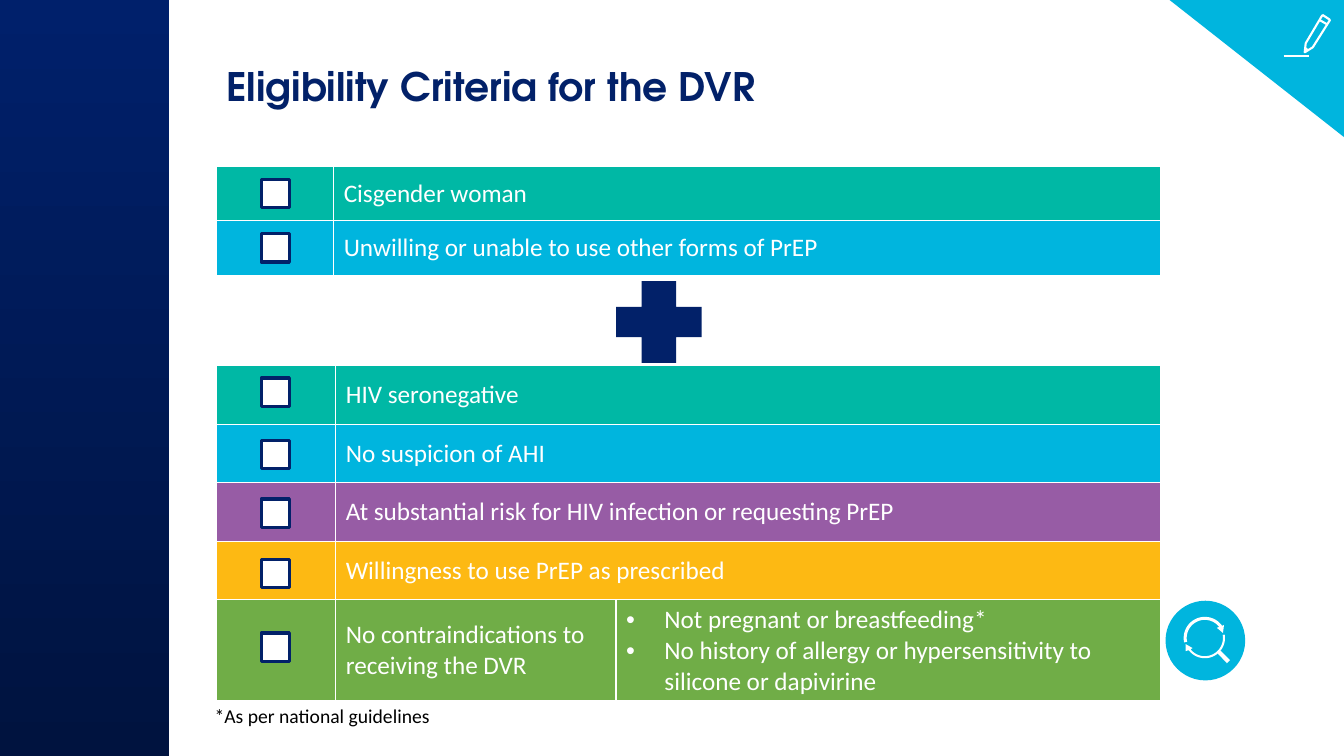
import math

from pptx import Presentation
from pptx import util as u
from pptx.dml.color import RGBColor
from pptx.enum import shapes, text
from pptx.oxml import parse_xml
from pptx.oxml.ns import nsdecls

NAVY = RGBColor(0x02, 0x21, 0x69)
NIGHT = RGBColor(0x00, 0x13, 0x3F)
ROYAL = RGBColor(0x00, 0x20, 0x6B)
TEAL = RGBColor(0x00, 0xB8, 0xA5)
CYAN = RGBColor(0x00, 0xB5, 0xDE)
PURPLE = RGBColor(0x97, 0x5C, 0xA5)
AMBER = RGBColor(0xFD, 0xB9, 0x13)
GREEN = RGBColor(0x70, 0xAD, 0x47)
WHITE = RGBColor(0xFF, 0xFF, 0xFF)
BLACK = RGBColor(0x00, 0x00, 0x00)

RECTANGLE = shapes.MSO_SHAPE.RECTANGLE
BULLET_INDENT = 0.38


class SlideBuilder:
    heading_font = "TeX Gyre Adventor"
    body_font = "Calibri"

    def __init__(self, slide):
        self.slide = slide

    def style(self, para, size, color, font=None, bold=False):
        for span in para.runs:
            span.font.name = font or self.body_font
            span.font.size = u.Pt(size)
            span.font.color.rgb = color
            span.font.bold = bold

    def paint(self, shape, fill=None, line=None, width=1):
        shape.shadow.inherit = False
        if fill is None:
            shape.fill.background()
        else:
            shape.fill.solid()
            shape.fill.fore_color.rgb = fill
        if line is None:
            shape.line.fill.background()
        else:
            shape.line.color.rgb = line
            shape.line.width = u.Pt(width)

    def shape(self, kind, at, fill, line=None, width=1):
        shape = self.slide.shapes.add_shape(kind, *map(u.Inches, at))
        self.paint(shape, fill, line, width)
        return shape

    def checkbox(self, top):
        self.shape(RECTANGLE, (2.59, top, 0.28, 0.28), WHITE, NAVY, 2.25)

    def outline(self, points, fill=None, line=None, width=1):
        points = [(u.Inches(x), u.Inches(y)) for x, y in points]
        builder = self.slide.shapes.build_freeform(*points[0])
        builder.add_line_segments(points[1:], close=True)
        self.paint(builder.convert_to_shape(), fill, line, width)

    def stroke(self, start, end, color, width):
        line = self.slide.shapes.add_connector(
            shapes.MSO_CONNECTOR.STRAIGHT, *map(u.Inches, start + end))
        line.line.color.rgb = color
        line.line.width = u.Pt(width)
        line._element.spPr.append(parse_xml(f"<a:effectLst {nsdecls('a')}/>"))

    def text(self, at, words, size, color, font=None, bold=False):
        box = self.slide.shapes.add_textbox(*map(u.Inches, at))
        box.text_frame.word_wrap = True
        box.text_frame.text = words
        self.style(box.text_frame.paragraphs[0], size, color, font, bold)

    def table(self, at, columns, heights, rows):
        """Each row is a fill and its cell texts; a list of texts is bulleted."""
        frame = self.slide.shapes.add_table(
            len(rows), len(columns), *map(u.Inches, at))
        table = frame.table
        table.first_row = table.horz_banding = False
        for column, width in zip(table.columns, columns):
            column.width = u.Inches(width)
        for r, (fill, entries) in enumerate(rows):
            table.rows[r].height = u.Inches(heights[r])
            for c in range(len(columns)):
                self.cell(table.cell(r, c), fill,
                          entries[c] if c < len(entries) else "")
            if len(entries) < len(columns):
                table.cell(r, len(entries) - 1).merge(
                    table.cell(r, len(columns) - 1))

    def cell(self, cell, fill, entry):
        properties = cell._tc.get_or_add_tcPr()
        for side in "LRTB":
            properties.append(parse_xml(
                f'<a:ln{side} {nsdecls("a")} w="{u.Pt(1)}"><a:solidFill>'
                f'<a:srgbClr val="{WHITE}"/></a:solidFill></a:ln{side}>'))
        cell.fill.solid()
        cell.fill.fore_color.rgb = fill
        cell.vertical_anchor = text.MSO_ANCHOR.MIDDLE
        bulleted = isinstance(entry, list)
        cell.text_frame.text = "\n".join(entry) if bulleted else entry
        for para in cell.text_frame.paragraphs:
            if bulleted:
                self.bullet(para)
            self.style(para, 18, WHITE)

    def bullet(self, para):
        properties = para._p.get_or_add_pPr()
        properties.set("marL", str(u.Inches(BULLET_INDENT)))
        properties.set("indent", str(-u.Inches(BULLET_INDENT)))
        properties.append(parse_xml(
            f'<a:buFont {nsdecls("a")} typeface="Arial"/>'))
        properties.append(parse_xml(f'<a:buChar {nsdecls("a")} char="•"/>'))


def arc(radius, first, last, steps=24):
    """Points around the centre of the search icon, in clockwise degrees."""
    angles = [math.radians(first + (last - first) * i / steps)
              for i in range(steps + 1)]
    return [(11.95 + radius * math.cos(a), 6.33 + radius * math.sin(a))
            for a in angles]


def main():
    deck = Presentation()
    deck.slide_width, deck.slide_height = u.Inches(13.33), u.Inches(7.5)
    page = SlideBuilder(deck.slides.add_slide(deck.slide_layouts[6]))

    # Side band and title
    band = page.shape(RECTANGLE, (0, 0, 1.68, 7.5), NAVY)
    band.fill.gradient()
    band.fill.gradient_angle = 90
    for stop, color in zip(band.fill.gradient_stops, (NIGHT, ROYAL)):
        stop.color.rgb = color
    page.text((2.15, 0.57, 10, 0.92), "Eligibility Criteria for the DVR",
              28, NAVY, page.heading_font, True)

    # Who the ring is for
    page.table((2.15, 1.65, 9.36, 1.08), (1.16, 8.2), [0.54] * 2, [
        (TEAL, ["", "Cisgender woman"]),
        (CYAN, ["", "Unwilling or unable to use other forms of PrEP"]),
    ])
    plus = page.shape(shapes.MSO_SHAPE.CROSS, (6.11, 2.79, 0.85, 0.81), NAVY)
    plus.adjustments[0] = 0.315

    # Further criteria
    page.table((2.15, 3.63, 9.36, 3.32), (1.18, 2.78, 5.4),
               [0.58] * 4 + [1], [
        (TEAL, ["", "HIV seronegative"]),
        (CYAN, ["", "No suspicion of AHI"]),
        (PURPLE, ["", "At substantial risk for HIV infection or requesting PrEP"]),
        (AMBER, ["", "Willingness to use PrEP as prescribed"]),
        (GREEN, ["", "No contraindications to receiving the DVR", [
            "Not pregnant or breastfeeding*",
            "No history of allergy or hypersensitivity to silicone or dapivirine",
        ]]),
    ])
    page.text((2.03, 6.93, 10.08, 0.34), "*As per national guidelines", 14, BLACK)

    # Tick boxes
    for top in (1.78, 2.32, 3.75, 4.37, 4.95, 5.55, 6.28):
        page.checkbox(top)

    # Search icon: two curved arrows, the lower one with a handle
    page.shape(shapes.MSO_SHAPE.OVAL, (11.56, 5.96, 0.79, 0.79), CYAN)
    page.outline(
        arc(0.18, 168, 322)
        + [(12.07, 6.23), (12.13, 6.28), (12.14, 6.2), (12.12, 6.21)]
        + arc(0.21, 325, 168), WHITE)
    page.outline(
        [(12.2, 6.55), (12.11, 6.46)] + arc(0.2, 40, -10)
        + arc(0.18, -10, 142)
        + [(11.83, 6.43), (11.76, 6.39), (11.76, 6.46), (11.79, 6.45)]
        + arc(0.2, 143, 50) + [(12.17, 6.58)], WHITE)

    # Corner with pencil
    corner = page.shape(shapes.MSO_SHAPE.RIGHT_TRIANGLE,
                        (11.6, 0, 1.73, 1.36), CYAN)
    corner.rotation = 180
    page.outline([(13.02, 0.47), (12.94, 0.52), (12.95, 0.43), (13.11, 0.16),
                  (13.12, 0.15), (13.18, 0.19), (13.19, 0.2)],
                 line=WHITE, width=1.5)
    for start, end in (((13.09, 0.2), (13.16, 0.24)),
                       ((12.95, 0.48), (12.97, 0.5)),
                       ((12.73, 0.56), (12.98, 0.56))):
        page.stroke(start, end, WHITE, 1.5)

    deck.save("out.pptx")


if __name__ == "__main__":
    main()
